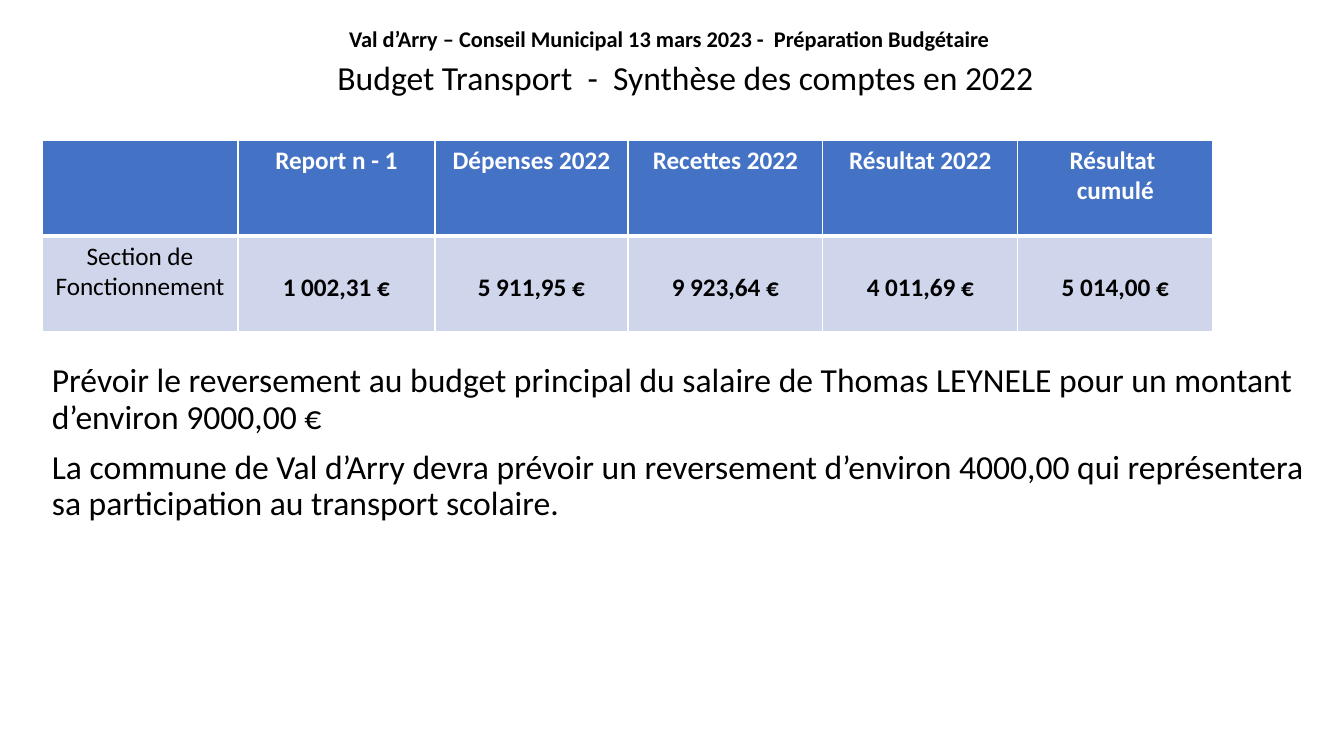
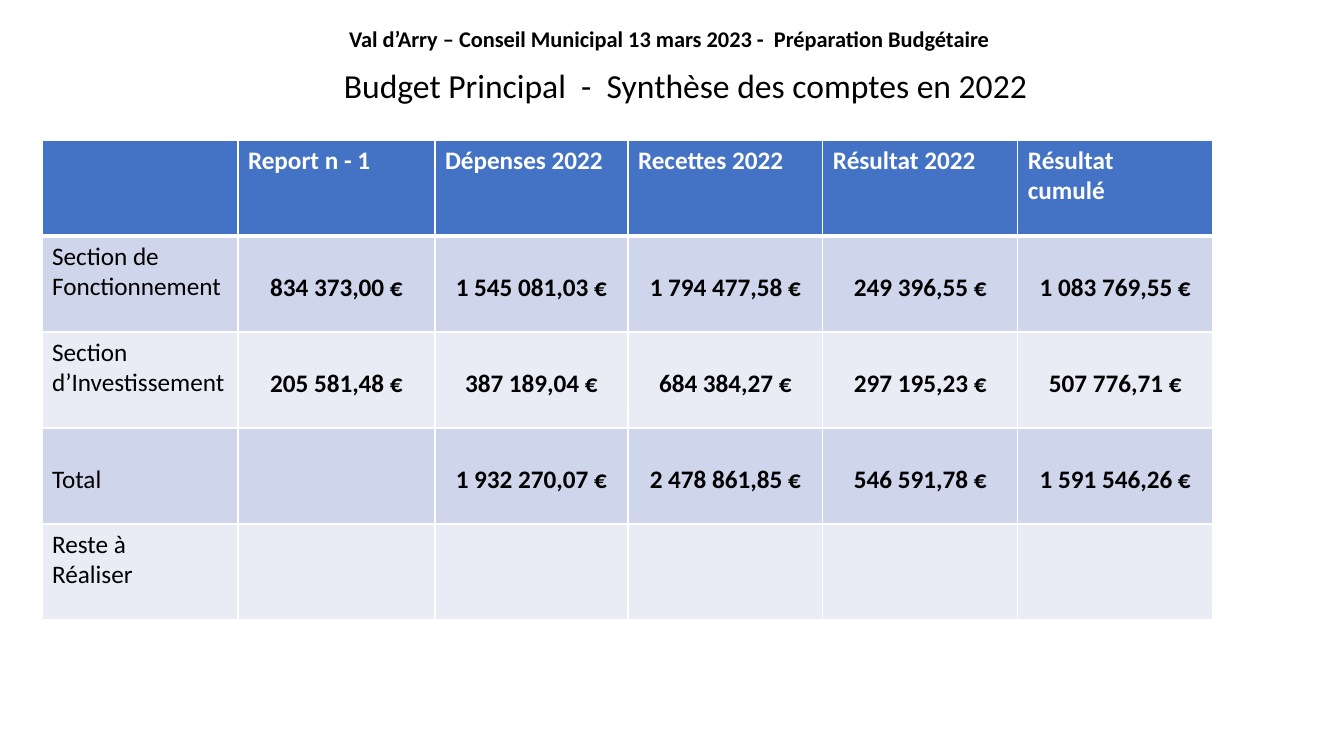
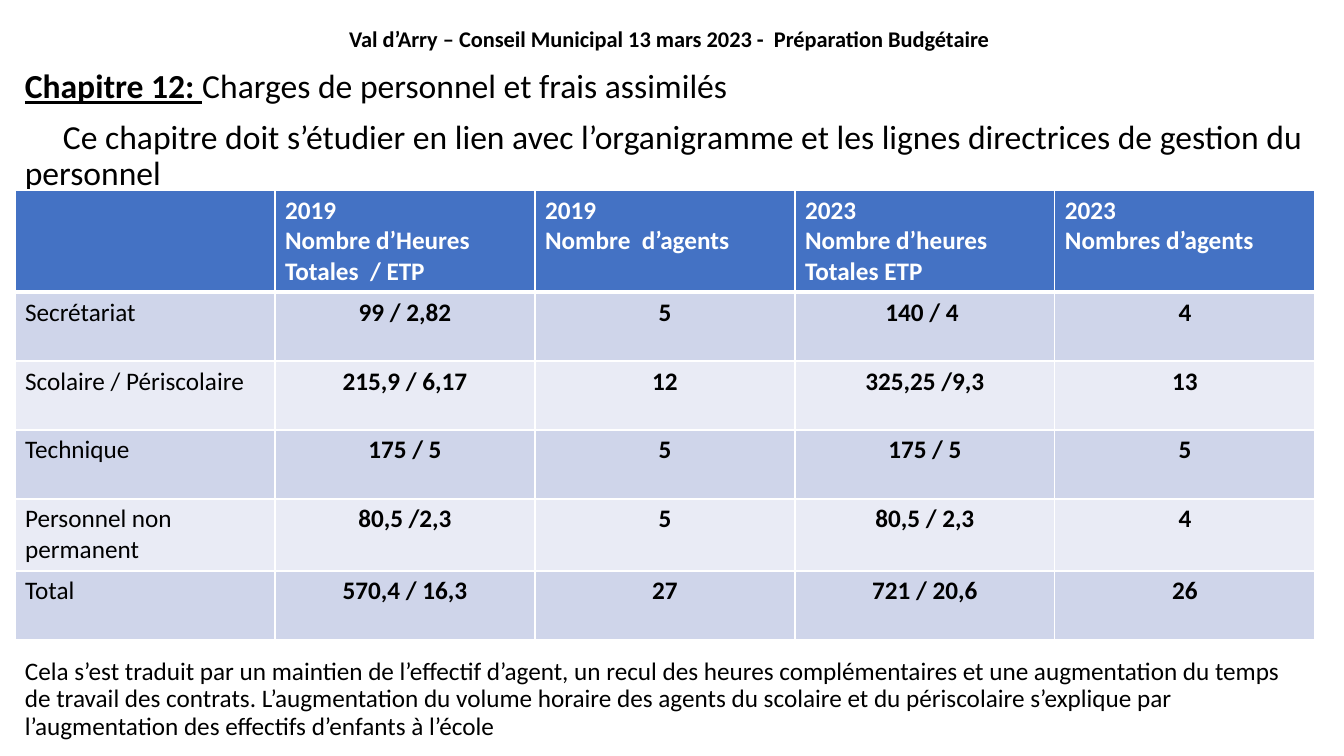
from lxml import etree
from pptx import Presentation
from pptx.dml.color import RGBColor
from pptx.enum.text import MSO_ANCHOR, PP_ALIGN
from pptx.oxml.ns import qn
from pptx.util import Pt

LEFT, CENTER = PP_ALIGN.LEFT, PP_ALIGN.CENTER
TOP, BOTTOM = MSO_ANCHOR.TOP, MSO_ANCHOR.BOTTOM
TITLE_ONLY = 5
SLIDE_W, SLIDE_H = 1344, 756
EMU_PER_PX = 12192000 / SLIDE_W
FONT = "Calibri"
COLORS = {
    "text": "000000",
    "header": "4472C4",
    "header_text": "FFFFFF",
    "band_dark": "CFD5EA",
    "band_light": "E9EBF5",
    "border": "FFFFFF",
}
MEETING = "Val d’Arry – Conseil Municipal 13 mars 2023 -  Préparation Budgétaire "
ACCOUNT_COLUMNS = [196, 197, 193, 195, 195, 195]
ACCOUNT_ROW = 96
CELL_INSET, CELL_LINE = 5, 31


def px(length):
    return round(length * EMU_PER_PX)


def box_emu(box):
    return [px(length) for length in box]


def rgb(name):
    return RGBColor.from_string(COLORS[name])


def write(frame, text, size=18, color="text", bold=False, align=LEFT,
          spacing=0.9, before=0, indent=0, lead=""):
    for line in text.split("\n"):
        first = frame.paragraphs[0]
        paragraph = frame.add_paragraph() if first.runs else first
        paragraph.alignment = align
        paragraph.line_spacing = spacing
        paragraph.space_before = Pt(before)
        if indent:
            paragraph._p.get_or_add_pPr().set("indent", str(px(indent)))
        for part, is_lead in ((lead, True), (line, False)):
            if part:
                run = paragraph.add_run()
                run.text = part
                run.font.name = FONT
                run.font.size = Pt(size)
                run.font.bold = bold or is_lead
                run.font.underline = is_lead
                run.font.color.rgb = rgb(color)


def text_area(slide, box):
    frame = slide.shapes.add_textbox(*box_emu(box)).text_frame
    frame.word_wrap = True
    return frame


def meeting_slide(deck):
    slide = deck.slides.add_slide(deck.slide_layouts[TITLE_ONLY])
    title = slide.shapes.title
    title.left, title.top, title.width, title.height = box_emu((168, 12, 1008, 45))
    title.text_frame.vertical_anchor = BOTTOM
    write(title.text_frame, MEETING, size=16, bold=True, align=CENTER)
    return slide


def set_borders(cell, **widths):
    properties = cell._tc.get_or_add_tcPr()
    for side in "LRTB":
        line = etree.SubElement(properties, qn(f"a:ln{side}"),
                                w=str(Pt(widths.get(side, 1))))
        fill = etree.SubElement(line, qn("a:solidFill"))
        etree.SubElement(fill, qn("a:srgbClr"), val=COLORS["border"])


def banded_table(slide, left, top, columns, heights, rows, label_align=LEFT, drop=False):
    box = (left, top, sum(columns), sum(heights))
    table = slide.shapes.add_table(len(rows), len(columns), *box_emu(box)).table
    table.horz_banding = False
    for column, width in zip(table.columns, columns):
        column.width = px(width)
    for r, (height, values) in enumerate(zip(heights, rows)):
        table.rows[r].height = px(height)
        header = r == 0
        band = "header" if header else "band_dark" if r % 2 else "band_light"
        for c, value in enumerate(values):
            cell = table.cell(r, c)
            set_borders(cell, B=3 if header else 1, T=3 if r == 1 else 1)
            cell.fill.solid()
            cell.fill.fore_color.rgb = rgb(band)
            cell.vertical_anchor = TOP
            if drop and not header and "\n" not in value:
                cell.margin_top = px(CELL_INSET + CELL_LINE)
            write(cell.text_frame, value, spacing=1.0,
                  color="header_text" if header else "text",
                  bold=header or c > 0,
                  align=label_align if header or c == 0 else CENTER)


def account_summary(deck, budget, subtitle_top, last_header, sections, align):
    slide = meeting_slide(deck)
    write(text_area(slide, (42, subtitle_top, 1287, 50)),
          f"Budget {budget}  -  Synthèse des comptes en 2022", size=24, align=CENTER)
    header = ["", "Report n - 1", "Dépenses 2022", "Recettes 2022",
              "Résultat 2022", last_header]
    rows = [header] + sections
    banded_table(slide, 42, 140, ACCOUNT_COLUMNS, [ACCOUNT_ROW] * len(rows), rows,
                 label_align=align, drop=True)
    return slide


def transport_slide(deck):
    sections = [["Section de\nFonctionnement", "1 002,31 €", "5 911,95 €",
                 "9 923,64 €", "4 011,69 €", "5 014,00 €"]]
    slide = account_summary(deck, "Transport", 57, "Résultat \ncumulé", sections, CENTER)
    write(text_area(slide, (42, 359, 1287, 175)),
          "Prévoir le reversement au budget principal du salaire de Thomas LEYNELE "
          "pour un montant d’environ 9000,00 €\n"
          "La commune de Val d’Arry devra prévoir un reversement d’environ 4000,00 "
          "qui représentera sa participation au transport scolaire.",
          size=24, before=10)


def main_budget_slide(deck):
    sections = [
        ["Section de\nFonctionnement", "834 373,00 €", "1 545 081,03 €",
         "1 794 477,58 €", "249 396,55 €", "1 083 769,55 €"],
        ["Section\nd’Investissement", "205 581,48 €", "387 189,04 €",
         "684 384,27 €", "297 195,23 €", "507 776,71 €"],
        ["Total", "", "1 932 270,07 €", "2 478 861,85 €", "546 591,78 €",
         "1 591 546,26 €"],
        ["Reste à\nRéaliser", "", "", "", "", ""],
    ]
    account_summary(deck, "Principal", 65, "Résultat\ncumulé", sections, LEFT)


def staff_slide(deck):
    slide = meeting_slide(deck)
    chapter = text_area(slide, (15, 65, 1302, 125))
    write(chapter, "Charges de personnel et frais assimilés", size=24,
          before=10, lead="Chapitre 12: ")
    write(chapter, "Ce chapitre doit s’étudier en lien avec l’organigramme et les "
          "lignes directrices de gestion du personnel", size=24, before=10, indent=38)
    rows = [
        ["", "2019\nNombre d’Heures\nTotales  / ETP", "2019\nNombre  d’agents",
         "2023\nNombre d’heures Totales ETP", "2023\nNombres d’agents"],
        ["Secrétariat", "99 / 2,82", "5", "140 / 4 ", "4"],
        ["Scolaire / Périscolaire", "215,9 / 6,17", "12", "325,25 /9,3", "13"],
        ["Technique", "175 / 5", "5", "175 / 5", "5"],
        ["Personnel non\npermanent", "80,5 /2,3", "5", "80,5 / 2,3", "4"],
        ["Total", "570,4 / 16,3", "27", "721 / 20,6", "26"],
    ]
    banded_table(slide, 15, 190, [260] * 5, [102, 69, 69, 69, 72, 69], rows)
    write(text_area(slide, (15, 654, 1302, 95)),
          "Cela s’est traduit par un maintien de l’effectif d’agent, un recul des heures "
          "complémentaires et une augmentation du temps de travail des contrats. "
          "L’augmentation du volume horaire des agents du scolaire et du périscolaire "
          "s’explique par l’augmentation des effectifs d’enfants à l’école")


def main():
    deck = Presentation()
    deck.slide_width, deck.slide_height = px(SLIDE_W), px(SLIDE_H)
    transport_slide(deck)
    main_budget_slide(deck)
    staff_slide(deck)
    deck.save("out.pptx")


if __name__ == "__main__":
    main()
